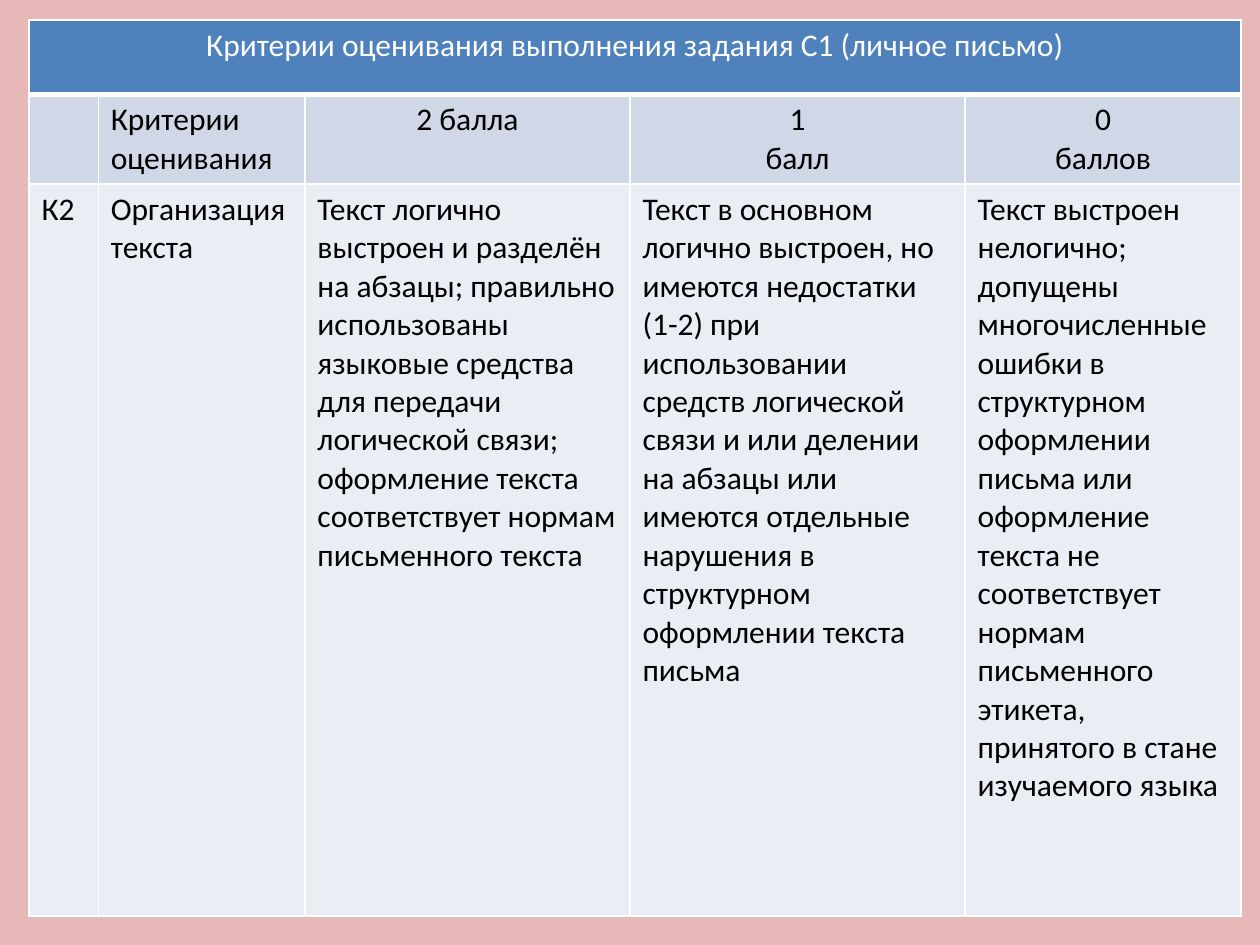
import dataclasses

import pptx
import pptx.dml.color
import pptx.enum.text
import pptx.oxml
import pptx.oxml.ns
import pptx.util

Inches = pptx.util.Inches
Align = pptx.enum.text.PP_ALIGN


@dataclasses.dataclass(frozen=True)
class Theme:
    background: str = "E6B9B8"
    title_fill: str = "4F81BD"
    heading_fill: str = "D0D8E8"
    body_fill: str = "E9EDF4"
    light: str = "FFFFFF"
    dark: str = "000000"
    font: str = "Calibri"
    size: int = 18
    thin_border: int = 1
    thick_border: int = 3


THEME = Theme()
TITLE = "Критерии оценивания выполнения задания С1 (личное письмо)"
HEADINGS = ["", "Критерии\nоценивания", "2 балла", "1\nбалл", "0\nбаллов"]
CRITERION = [
    "К2",
    "Организация текста",
    "Текст логично выстроен и разделён на абзацы; правильно использованы языковые "
    "средства для передачи логической связи; оформление текста соответствует нормам "
    "письменного текста",
    "Текст в основном логично выстроен, но имеются недостатки (1-2) при использовании "
    "средств логической связи и или делении на абзацы или имеются отдельные нарушения "
    "в структурном оформлении текста письма",
    "Текст выстроен нелогично; допущены многочисленные ошибки в структурном оформлении "
    "письма или оформление текста не соответствует нормам письменного этикета, "
    "принятого в стане изучаемого языка",
]
COLUMN_WIDTHS = [0.55, 1.64, 2.58, 2.66, 2.19]
ROW_HEIGHTS = [0.59, 0.71, 5.81]


def rgb(value):
    return pptx.dml.color.RGBColor.from_string(value)


def style_cell(cell, fill, bottom_width):
    properties = cell._tc.get_or_add_tcPr()
    for side in "LRTB":
        points = bottom_width if side == "B" else THEME.thin_border
        properties.append(pptx.oxml.parse_xml(
            f'<a:ln{side} {pptx.oxml.ns.nsdecls("a")} w="{pptx.util.Pt(points)}">'
            f'<a:solidFill><a:srgbClr val="{THEME.light}"/></a:solidFill></a:ln{side}>'
        ))
    cell.fill.solid()
    cell.fill.fore_color.rgb = rgb(fill)


def write_cell(cell, text, color, alignment):
    frame = cell.text_frame
    for index, line in enumerate(text.split("\n")):
        para = frame.add_paragraph() if index else frame.paragraphs[0]
        para.alignment = alignment
        para.font.size = pptx.util.Pt(THEME.size)
        if line:
            span = para.add_run()
            span.text = line
            span.font.name = THEME.font
            span.font.size = pptx.util.Pt(THEME.size)
            span.font.color.rgb = rgb(color)


def add_criteria_table(page, left, top, width, height):
    box = page.shapes.add_table(
        len(ROW_HEIGHTS), len(COLUMN_WIDTHS), left, top, width, height
    )
    table = box.table
    for column, size in zip(table.columns, COLUMN_WIDTHS):
        column.width = Inches(size)
    for row, size in zip(table.rows, ROW_HEIGHTS):
        row.height = Inches(size)

    fills = [THEME.title_fill, THEME.heading_fill, THEME.body_fill]
    for row_index, (row, fill) in enumerate(zip(table.rows, fills)):
        bottom_width = THEME.thin_border if row_index else THEME.thick_border
        for cell in row.cells:
            style_cell(cell, fill, bottom_width)

    table.cell(0, 0).merge(table.cell(0, len(COLUMN_WIDTHS) - 1))
    write_cell(table.cell(0, 0), TITLE, THEME.light, Align.CENTER)
    for index, (heading, text) in enumerate(zip(HEADINGS, CRITERION)):
        heading_alignment = Align.CENTER if index >= 2 else Align.LEFT
        write_cell(table.cell(1, index), heading, THEME.dark, heading_alignment)
        write_cell(table.cell(2, index), text, THEME.dark, Align.LEFT)


def main():
    deck = pptx.Presentation()
    deck.slide_width = Inches(10)
    deck.slide_height = Inches(7.5)
    page = deck.slides.add_slide(deck.slide_layouts[6])
    page.background.fill.solid()
    page.background.fill.fore_color.rgb = rgb(THEME.background)
    add_criteria_table(
        page, Inches(0.23), Inches(0.16),
        Inches(sum(COLUMN_WIDTHS)), Inches(sum(ROW_HEIGHTS)),
    )
    deck.save("out.pptx")


if __name__ == "__main__":
    main()
